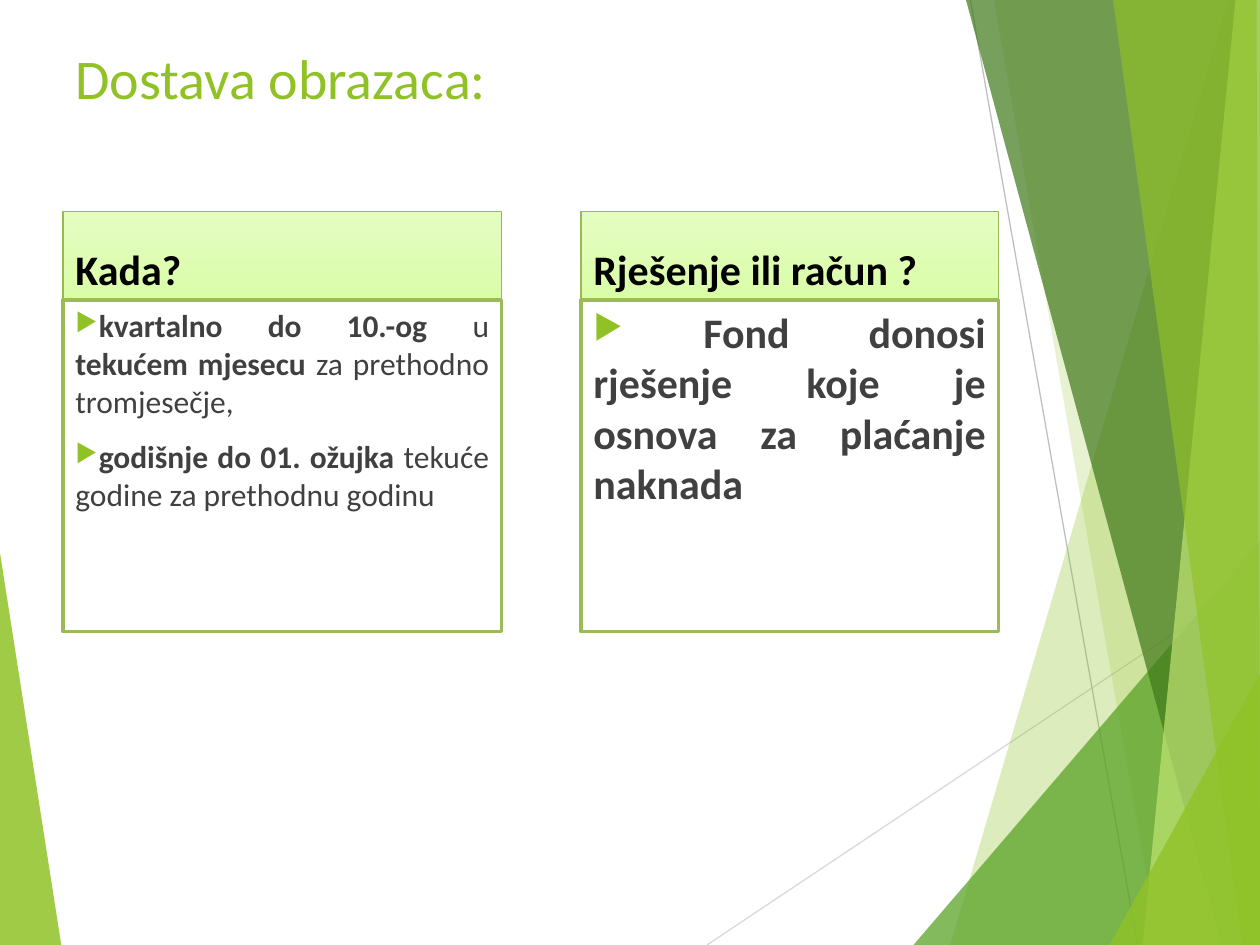
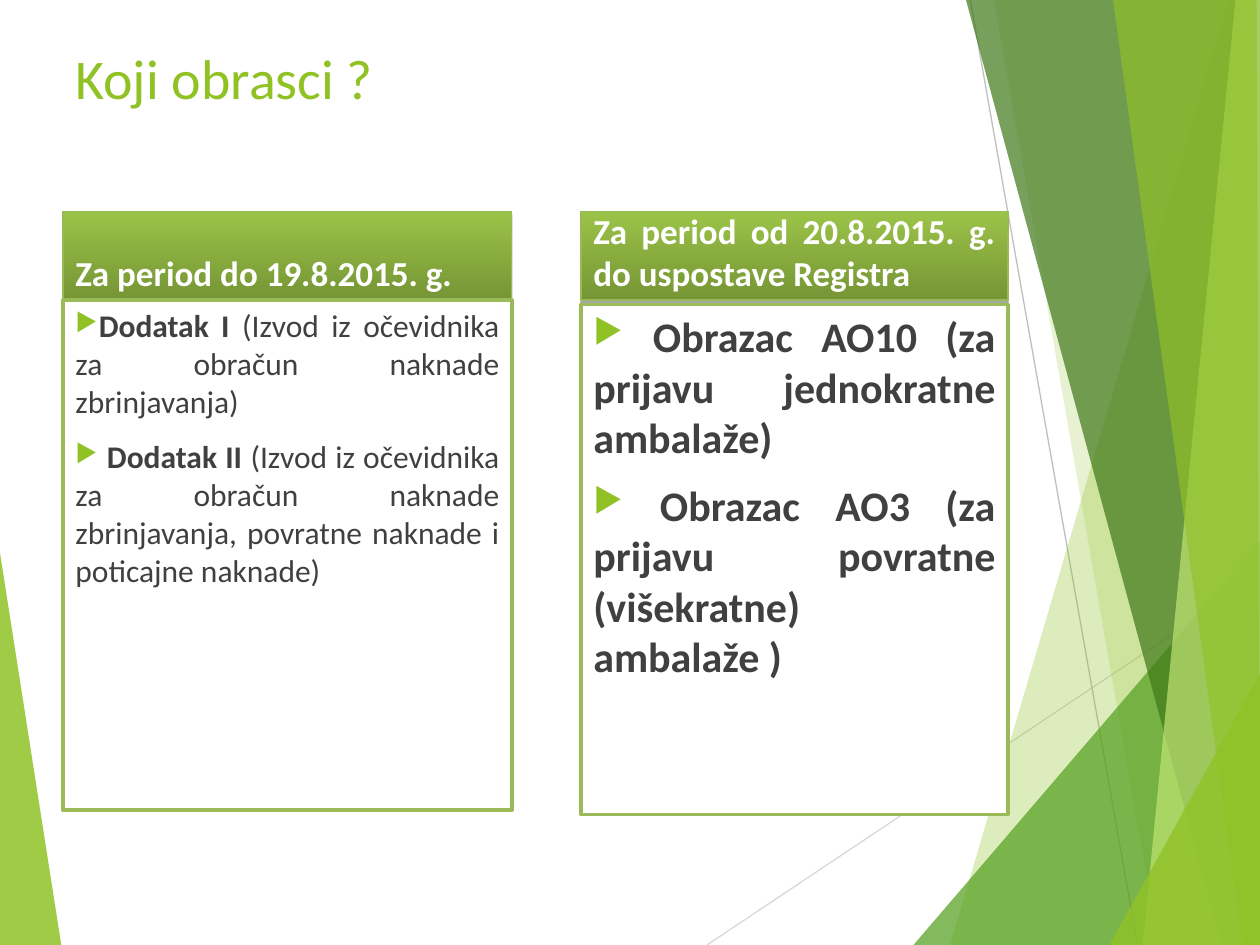
from lxml.etree import SubElement
from pptx import Presentation
from pptx.dml.color import RGBColor
from pptx.enum.shapes import MSO_CONNECTOR, MSO_SHAPE
from pptx.enum.text import MSO_ANCHOR, PP_ALIGN
from pptx.oxml.ns import qn
from pptx.util import Pt

LIME = "90C226"
GRAY = "404040"
FONT = "Calibri"
LEFT, RIGHT = 36, 332
TOP, HEAD = 121, 50.5

BANDS = [
    (LIME, 85, [(0, 316), (35, 540), (0, 540)]),
    (LIME, 30, [(702, 0), (543, 540), (720, 540), (720, 0)]),
    (LIME, 20, [(567.5, 0), (661.5, 540), (720, 540), (720, 0)]),
    ("54A021", 72, [(522.5, 540), (720, 309), (720, 540)]),
    ("3F7819", 70, [(552, 0), (698.5, 540), (720, 540), (720, 0)]),
    ("C0E474", 70, [(706.5, 0), (653, 540), (720, 540), (720, 0)]),
    (LIME, 65, [(636, 0), (710, 540), (720, 540), (718.5, 0)]),
    (LIME, 80, [(634.5, 540), (720, 385), (720, 540)]),
]
RAYS = [("D9D9D9", (404, 540, 720, 329)), ("BFBFBF", (554.5, 0, 650, 540))]

SLIDES = [
    dict(
        title="Dostava obrazaca:", tints=("DAFDA7", "E4FDC2"),
        ink="000000", size=24, tall=189.5, drop=1.6, shade=38,
        cards=[
            (LEFT, 250.5, 0, 18, "Kada?",
             "kvartalno do 10.-og |u |tekućem mjesecu |za prethodno tromjesečje,\n"
             "godišnje do 01. ožujka |tekuće godine za prethodnu godinu"),
            (RIGHT, 238.5, 0, 24, "Rješenje ili račun ?",
             " Fond donosi rješenje koje je osnova za plaćanje naknada"),
        ]),
    dict(
        title="Koji obrasci ?", tints=("769535", "9BC348"),
        ink="FFFFFF", size=20, tall=291.5, drop=1.8, shade=35,
        cards=[
            (LEFT, 256.5, 0, 18, "Za period do 19.8.2015. g.",
             "Dodatak I| (Izvod iz očevidnika za obračun naknade zbrinjavanja)\n"
             " Dodatak II| (Izvod iz očevidnika za obračun naknade zbrinjavanja, "
             "povratne naknade i poticajne naknade)"),
            (RIGHT, 244, 2.5, 24, "Za period od 20.8.2015. g. do uspostave Registra",
             " Obrazac AO10 (za prijavu jednokratne ambalaže)\n"
             " Obrazac AO3 (za prijavu povratne (višekratne) ambalaže )"),
        ]),
]


def paint(fill, *tints, alpha=100):
    if len(tints) == 1:
        fill.solid()
        fill.fore_color.rgb = RGBColor.from_string(tints[0])
        if alpha < 100:
            tone = fill._xPr.find(qn("a:solidFill"))[0]
            SubElement(tone, qn("a:alpha"), val=str(alpha * 1000))
    else:
        fill.gradient()
        fill.gradient_angle = 90
        for stop, tint in zip(fill.gradient_stops, tints):
            stop.color.rgb = RGBColor.from_string(tint)


def write(shape, text, size=18, tint=GRAY, bold=True, bullet=False,
          anchor=MSO_ANCHOR.TOP, align=PP_ALIGN.JUSTIFY):
    frame = shape.text_frame
    frame.word_wrap = True
    frame.vertical_anchor = anchor
    for row, line in enumerate(text.split("\n")):
        para = frame.add_paragraph() if row else frame.paragraphs[0]
        para.alignment = align
        if bullet:
            props = para._p.get_or_add_pPr()
            tone = SubElement(props, qn("a:buClr"))
            SubElement(tone, qn("a:srgbClr"), val=LIME)
            SubElement(props, qn("a:buSzPct"), val="80000")
            SubElement(props, qn("a:buChar"), char="▶")
        if row:
            para.space_before = Pt(10)
        for turn, part in enumerate(line.split("|")):
            run = para.add_run()
            run.text = part
            run.font.name = FONT
            run.font.size = Pt(size)
            run.font.bold = bold and turn % 2 == 0
            paint(run.font.fill, tint)


deck = Presentation()
deck.slide_width, deck.slide_height = Pt(720), Pt(540)

for page in SLIDES:
    slide = deck.slides.add_slide(deck.slide_layouts[6])
    shapes = slide.shapes
    paint(slide.background.fill, "FFFFFF")

    for tint, ends in RAYS:
        ray = shapes.add_connector(MSO_CONNECTOR.STRAIGHT, *map(Pt, ends))
        paint(ray.line.fill, tint)
        ray.line.width = Pt(0.75)
        SubElement(ray._element.spPr, qn("a:effectLst"))

    for tint, alpha, points in BANDS:
        path = shapes.build_freeform(*points[0], scale=Pt(1))
        path.add_line_segments(points[1:], close=True)
        band = path.convert_to_shape()
        band.shadow.inherit = False
        paint(band.fill, tint, alpha=alpha)
        band.line.fill.background()

    title = shapes.add_textbox(Pt(LEFT), Pt(21.5), Pt(648), Pt(90))
    write(title, page["title"], size=32, tint=LIME, bold=False, align=PP_ALIGN.LEFT)

    for left, width, gap, size, label, body in page["cards"]:
        head = shapes.add_shape(MSO_SHAPE.RECTANGLE, Pt(left), Pt(TOP), Pt(width), Pt(HEAD))
        head.shadow.inherit = False
        paint(head.fill, *page["tints"])
        paint(head.line.fill, "98B954")
        head.line.width = Pt(0.75)
        glow = head._element.spPr.find(qn("a:effectLst"))
        cast = SubElement(glow, qn("a:outerShdw"), dist=str(Pt(page["drop"])),
                          dir="5400000", rotWithShape="0")
        tone = SubElement(cast, qn("a:srgbClr"), val="000000")
        SubElement(tone, qn("a:alpha"), val=str(page["shade"] * 1000))
        write(head, label, size=page["size"], tint=page["ink"], anchor=MSO_ANCHOR.BOTTOM)

        card = shapes.add_shape(MSO_SHAPE.RECTANGLE, Pt(left), Pt(TOP + HEAD + gap),
                                Pt(width), Pt(page["tall"]))
        card.shadow.inherit = False
        paint(card.fill, "FFFFFF")
        paint(card.line.fill, "9BBB59")
        card.line.width = Pt(2)
        write(card, body, size=size, bullet=True)

deck.save("out.pptx")
